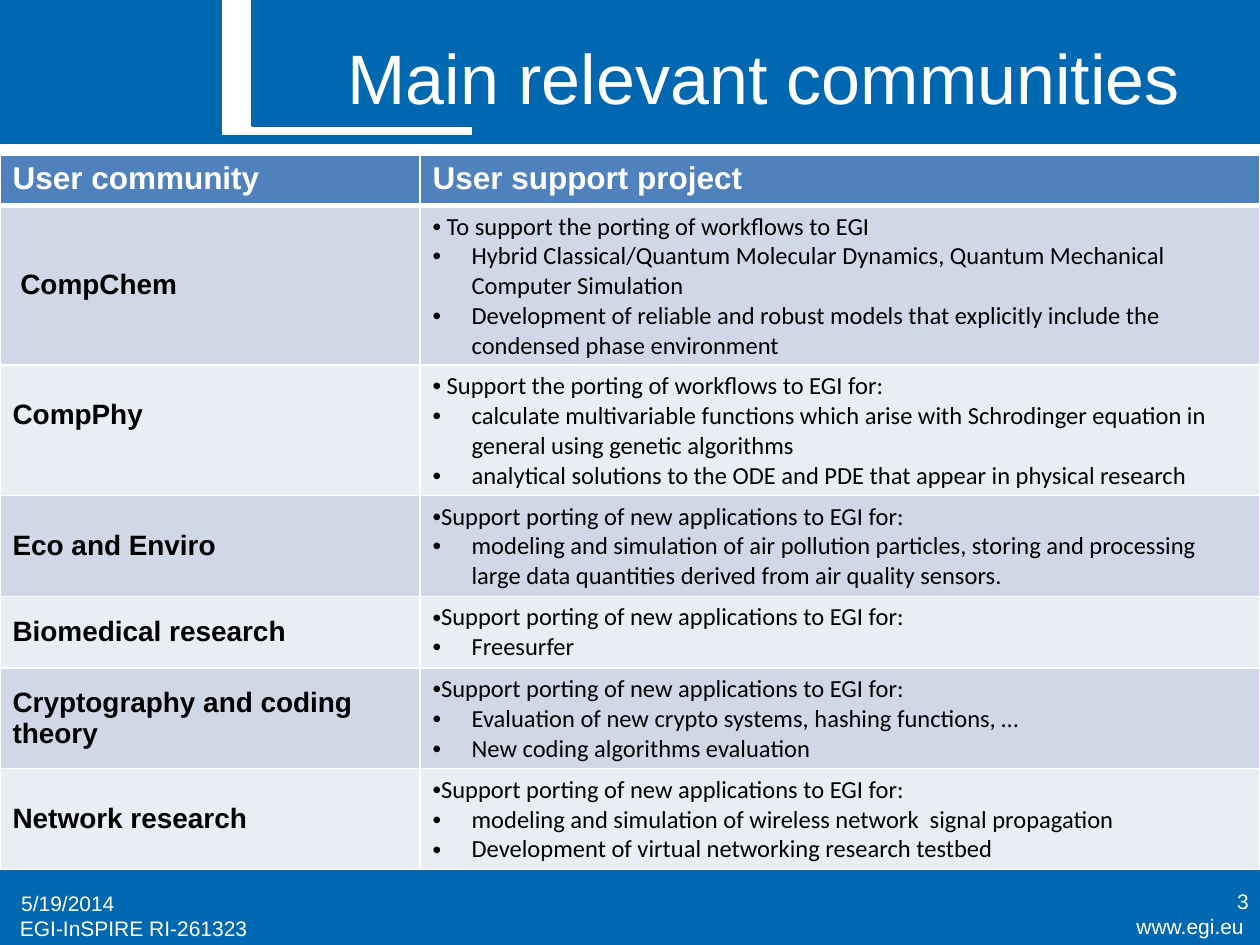
from dataclasses import dataclass

from lxml import etree
from pptx import Presentation
from pptx.dml.color import RGBColor
from pptx.enum.shapes import MSO_SHAPE
from pptx.enum.text import MSO_ANCHOR, PP_ALIGN
from pptx.oxml.ns import qn
from pptx.util import Inches, Pt

RECTANGLE = MSO_SHAPE.RECTANGLE
TOP, MIDDLE = MSO_ANCHOR.TOP, MSO_ANCHOR.MIDDLE
LEFT, CENTER, RIGHT = PP_ALIGN.LEFT, PP_ALIGN.CENTER, PP_ALIGN.RIGHT


@dataclass(frozen=True)
class Theme:
    blue: str = "0067B1"
    white: str = "FFFFFF"
    black: str = "000000"
    header: str = "4F81BD"
    bands: tuple = ("D0D8E8", "E9EDF4")
    heading_font: str = "Arial"
    body_font: str = "Calibri"
    title_size: int = 40
    header_size: int = 18
    name_size: int = 16
    body_size: int = 14
    footer_size: int = 12


THEME = Theme()
WIDTH, HEIGHT = 10, 7.5
COLUMN_SHARES = (1 / 3, 2 / 3)
HEADER_HEIGHT = 0.37
BULLET_INDENT = 0.31
HEADINGS = ("User community", "User support project")
NEW_APPLICATIONS = "Support porting of new applications to EGI for:"

# Community, row height, lead line, projects
COMMUNITIES = [
    (" CompChem", 1.19, " To support the porting of workflows to EGI", [
        "Hybrid Classical/Quantum Molecular Dynamics, Quantum Mechanical Computer Simulation",
        "Development of reliable and robust models that explicitly include the condensed phase environment"]),
    ("CompPhy", 0.97, " Support the porting of workflows to EGI for:", [
        "calculate multivariable functions which arise with Schrodinger equation in general using genetic algorithms",
        "analytical solutions to the ODE and PDE that appear in physical research"]),
    ("Eco and Enviro", 0.75, NEW_APPLICATIONS, [
        "modeling and simulation of air pollution particles, storing and processing "
        "large data quantities derived from air quality sensors."]),
    ("Biomedical research", 0.53, NEW_APPLICATIONS, ["Freesurfer"]),
    ("Cryptography and coding theory", 0.75, NEW_APPLICATIONS, [
        "Evaluation of new crypto systems, hashing functions, …",
        "New coding algorithms evaluation"]),
    ("Network research", 0.8, NEW_APPLICATIONS, [
        "modeling and simulation of wireless network  signal propagation",
        "Development of virtual networking research testbed"]),
]


def rgb(color):
    return RGBColor.from_string(color)


def style_font(para, size, color, font=THEME.heading_font, bold=False):
    for span in para.runs:
        span.font.name, span.font.size, span.font.bold = font, Pt(size), bold
        span.font.color.rgb = rgb(color)


def paint(shape, color, outlined=True):
    shape.shadow.inherit = False
    shape.fill.solid()
    shape.fill.fore_color.rgb = rgb(color)
    if outlined:
        shape.line.color.rgb = rgb(color)
        shape.line.width = Pt(0.75)
    else:
        shape.line.fill.background()


def add_block(page, area, color, outlined=True):
    block = page.shapes.add_shape(RECTANGLE, *map(Inches, area))
    paint(block, color, outlined)


def add_label(page, area, text, size, align=LEFT, anchor=MIDDLE):
    box = page.shapes.add_textbox(*map(Inches, area))
    frame = box.text_frame
    frame.word_wrap = True
    frame.vertical_anchor = anchor
    frame.text = text
    para = frame.paragraphs[0]
    para.alignment = align
    style_font(para, size, THEME.white)


def add_wave(page, area, bend_share=0.4, steps=32):
    """Blue panel whose left edge is an S-shaped curve."""
    left, top, width, height = area
    bend = width * bend_share
    points = [(left + width, top), (left + width, top + height)]
    for step in range(steps + 1):
        t = step / steps
        across = 3 * (1 - t) ** 2 * t + t ** 3
        down = (1 - t) ** 3 + 3 * (1 - t) ** 2 * t
        points.append((left + bend * across, top + height * down))
    builder = page.shapes.build_freeform(*points[0], scale=Inches(1))
    builder.add_line_segments(points[1:], close=True)
    paint(builder.convert_to_shape(), THEME.blue)


def add_banner(page, area):
    left, top, width, height = area
    add_block(page, area, THEME.blue)
    cutout = (left + 1.77, top, 1.97, height - 0.07)
    add_block(page, cutout, THEME.white)
    add_wave(page, cutout)
    add_label(page, (left + 2.32, top + 0.13, width - 2.52, 0.95),
              "Main relevant communities", THEME.title_size, CENTER)


def add_footer(page, area):
    left, top, width, height = area
    right = left + width
    add_block(page, area, THEME.blue, outlined=False)
    size = THEME.footer_size
    add_label(page, (right - 1.61, top + 0.3, 1.58, 0.31), "www.egi.eu", size, RIGHT, TOP)
    add_label(page, (left + 0.06, top + 0.32, 2.5, 0.31), "EGI-InSPIRE RI-261323", size, LEFT, TOP)
    add_label(page, (left + 0.07, top + 0.07, 2.33, 0.4), "5/19/2014", size)
    add_label(page, (right - 2.32, top + 0.05, 2.33, 0.4), "3", size, RIGHT)


def style_cell(cell, color, top_line=1, bottom_line=1):
    properties = cell._tc.get_or_add_tcPr()
    for side, points in (("L", 1), ("R", 1), ("T", top_line), ("B", bottom_line)):
        line = etree.SubElement(properties, qn(f"a:ln{side}"), w=str(Pt(points)))
        fill = etree.SubElement(line, qn("a:solidFill"))
        etree.SubElement(fill, qn("a:srgbClr"), val=THEME.white)
    cell.fill.solid()
    cell.fill.fore_color.rgb = rgb(color)


def add_bullet(para, indent):
    properties = para._p.get_or_add_pPr()
    properties.set("marL", str(Inches(indent)))
    properties.set("indent", str(-Inches(indent)))
    etree.SubElement(properties, qn("a:buFont"), typeface=THEME.heading_font)
    etree.SubElement(properties, qn("a:buChar"), char="•")


def fill_heading(cell, text, size, color):
    cell.text_frame.text = text
    style_font(cell.text_frame.paragraphs[0], size, color, bold=True)


def fill_projects(cell, lead, projects):
    cell.text_frame.text = "\n".join([lead, *projects])
    for index, para in enumerate(cell.text_frame.paragraphs):
        add_bullet(para, BULLET_INDENT if index else 0)
        style_font(para, THEME.body_size, THEME.black, THEME.body_font)


def add_communities(page, area):
    holder = page.shapes.add_table(len(COMMUNITIES) + 1, len(HEADINGS), *map(Inches, area))
    table = holder.table
    for column, share in zip(table.columns, COLUMN_SHARES):
        column.width = Inches(area[2] * share)

    # Header row
    table.rows[0].height = Inches(HEADER_HEIGHT)
    for cell, text in zip(table.rows[0].cells, HEADINGS):
        style_cell(cell, THEME.header, bottom_line=3)
        fill_heading(cell, text, THEME.header_size, THEME.white)

    # One banded row per community
    for index, (name, height, lead, projects) in enumerate(COMMUNITIES):
        row = table.rows[index + 1]
        row.height = Inches(height)
        name_cell, project_cell = row.cells
        for cell in (name_cell, project_cell):
            style_cell(cell, THEME.bands[index % 2], top_line=1 if index else 3)
        name_cell.vertical_anchor = MIDDLE
        fill_heading(name_cell, name, THEME.name_size, THEME.black)
        fill_projects(project_cell, lead, projects)
    # CompPhy sits slightly above the middle of its row
    table.cell(2, 0).margin_bottom = Inches(0.3)


def main():
    deck = Presentation()
    deck.slide_width, deck.slide_height = Inches(WIDTH), Inches(HEIGHT)
    page = deck.slides.add_slide(deck.slide_layouts[6])
    add_footer(page, (0, HEIGHT * 0.92, WIDTH, HEIGHT * 0.08))
    add_banner(page, (0, 0, WIDTH, 1.14))
    add_communities(page, (0, 1.23, WIDTH, 5.67))
    deck.save("out.pptx")


if __name__ == "__main__":
    main()
